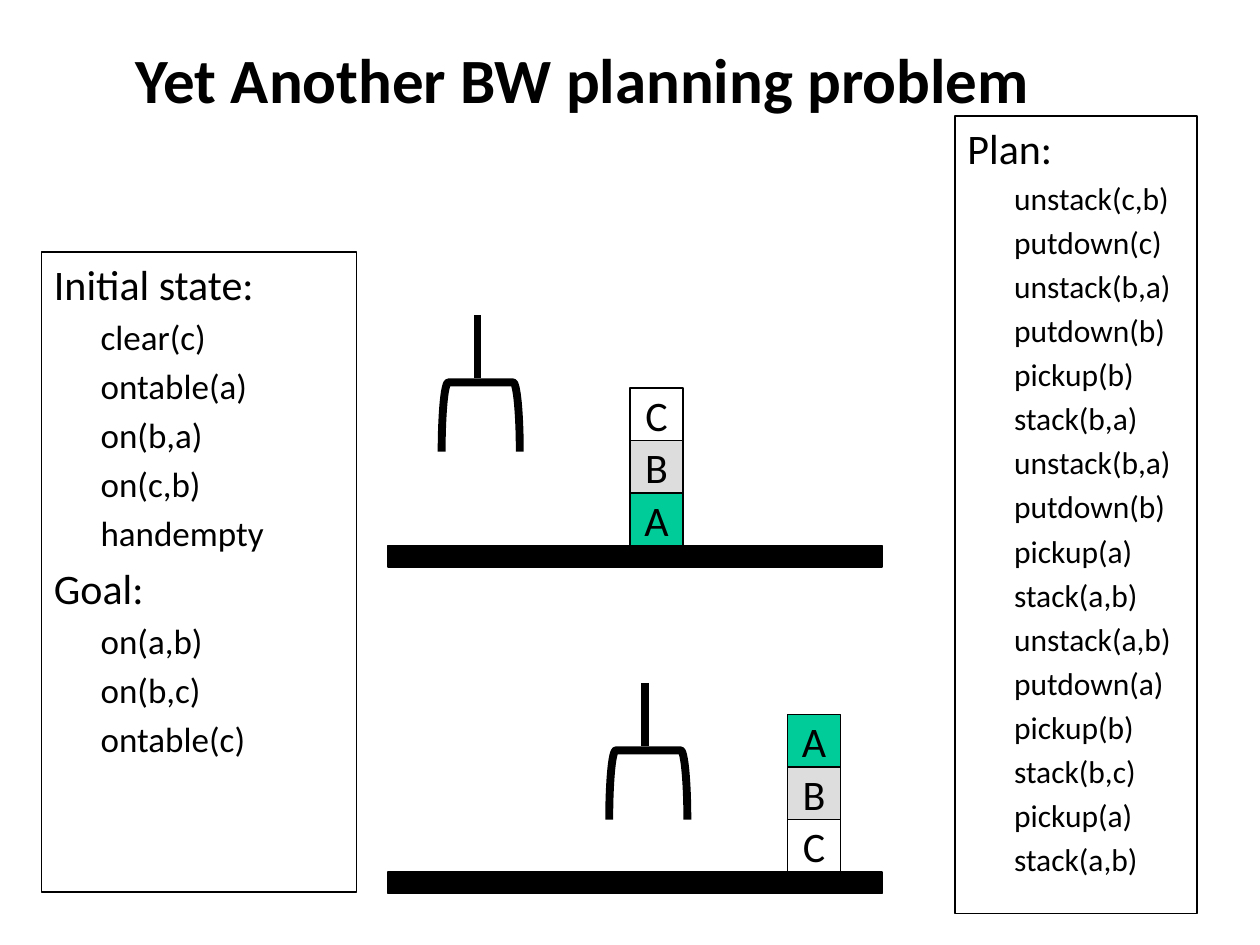
"""Build the blocks-world planning slide with its states, plan and drawings."""
from lxml.etree import SubElement
from pptx import Presentation
from pptx.dml.color import RGBColor
from pptx.enum.shapes import MSO_CONNECTOR as Connector, MSO_SHAPE as Shape
from pptx.enum.text import MSO_ANCHOR as Anchor, PP_ALIGN as Align
from pptx.oxml.ns import qn
from pptx.util import Inches, Pt

COLORS = {"ink": "000000", "A": "00CC99", "B": "DDDDDD", "C": None}
INK = RGBColor.from_string(COLORS["ink"])

deck = Presentation()
deck.slide_width, deck.slide_height = Inches(10), Inches(7.5)
slide = deck.slides.add_slide(deck.slide_layouts[6])


def add_outlined(kind, left, top, width, height, fill=None, weight=0.75):
    outlined = slide.shapes.add_shape(
        kind, Inches(left), Inches(top), Inches(width), Inches(height))
    outlined.shadow.inherit = False
    outlined.line.color.rgb = INK
    outlined.line.width = Pt(weight)
    if fill:
        outlined.fill.solid()
        outlined.fill.fore_color.rgb = RGBColor.from_string(fill)
    else:
        outlined.fill.background()
    return outlined


def write_line(paragraph, wording, size, align, bold=False):
    paragraph.text = wording
    paragraph.alignment = align
    paragraph.font.name = "Calibri"
    paragraph.font.size = Pt(size)
    paragraph.font.bold = bold
    paragraph.font.color.rgb = INK


title = slide.shapes.add_textbox(0, 0, Inches(9.25), Inches(1.25)).text_frame
title.word_wrap = True
title.vertical_anchor = Anchor.MIDDLE
write_line(title.paragraphs[0], "Yet Another BW planning problem", 36, Align.CENTER, True)

initial_state = ["clear(c)", "ontable(a)", "on(b,a)", "on(c,b)", "handempty"]
goal = ["on(a,b)", "on(b,c)", "ontable(c)"]
plan = ["unstack(c,b)", "putdown(c)", "unstack(b,a)", "putdown(b)",
        "pickup(b)", "stack(b,a)", "unstack(b,a)", "putdown(b)",
        "pickup(a)", "stack(a,b)", "unstack(a,b)", "putdown(a)",
        "pickup(b)", "stack(b,c)", "pickup(a)", "stack(a,b)"]
panels = [
    ((0.33, 2, 2.5, 5.08), 20, ["Initial state:", *initial_state, "Goal:", *goal]),
    ((7.58, 0.92, 1.92, 6.33), 18, ["Plan:", *plan]),
]
for area, step_size, lines in panels:
    panel = add_outlined(Shape.RECTANGLE, *area).text_frame
    panel.word_wrap = True
    panel.vertical_anchor = Anchor.TOP
    for index, wording in enumerate(lines):
        paragraph = panel.add_paragraph() if index else panel.paragraphs[0]
        heading = wording.endswith(":")
        write_line(paragraph, wording, 24 if heading else step_size, Align.LEFT)
        paragraph.level = 0 if heading else 1
        properties = paragraph._p.get_or_add_pPr()
        properties.set("marL", str(Inches(0.25 if heading else 0.62)))
        properties.set("indent", str(Inches(-0.25)))
        space_before = SubElement(properties, qn("a:spcBef"))
        SubElement(space_before, qn("a:spcPct")).set("val", "20000")
        properties.insert(0, space_before)

block_size = 0.42
scenes = [(4.33, 5, "CBA", 3.79, 2.5), (6.92, 6.25, "ABC", 5.12, 5.42)]
for table_top, stack_left, stack, hand_x, hand_top in scenes:
    add_outlined(Shape.RECTANGLE, 3.08, table_top, 3.92, 0.17, COLORS["ink"])
    for row, letter in enumerate(stack):
        block_top = table_top - (len(stack) - row) * 1.25 / 3
        block = add_outlined(Shape.RECTANGLE, stack_left, block_top,
                             block_size, block_size, COLORS[letter]).text_frame
        block.word_wrap = False
        block.vertical_anchor = Anchor.MIDDLE
        write_line(block.paragraphs[0], letter, 24, Align.CENTER)

    gripper = add_outlined(Shape.RIGHT_BRACKET, hand_x - 0.25, hand_top + 0.5,
                           0.55, 0.62, weight=4.5)
    gripper.rotation = 270
    gripper.adjustments[0] = 0.095
    arm = slide.shapes.add_connector(
        Connector.STRAIGHT, Inches(hand_x), Inches(hand_top),
        Inches(hand_x), Inches(hand_top + 0.5))
    arm.line.color.rgb = INK
    arm.line.width = Pt(4.5)
    SubElement(arm._element.spPr, qn("a:effectLst"))

deck.save("out.pptx")
